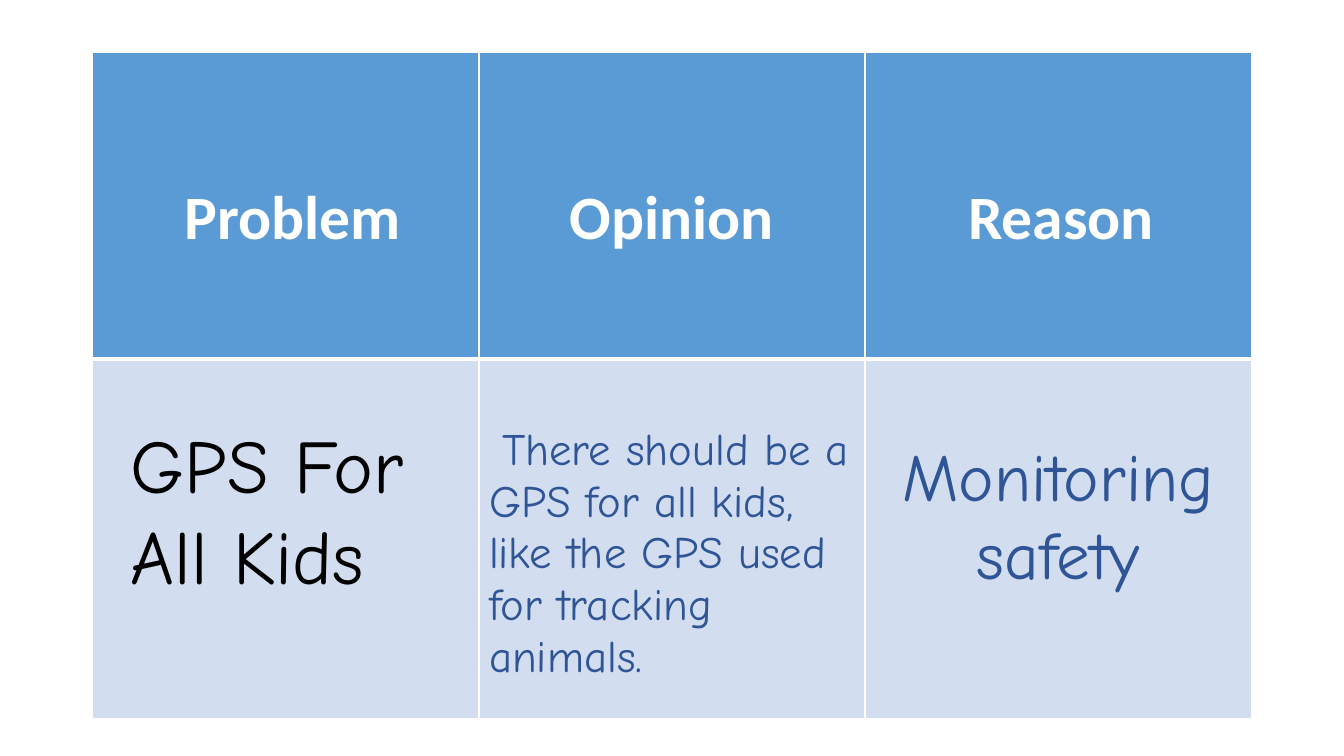
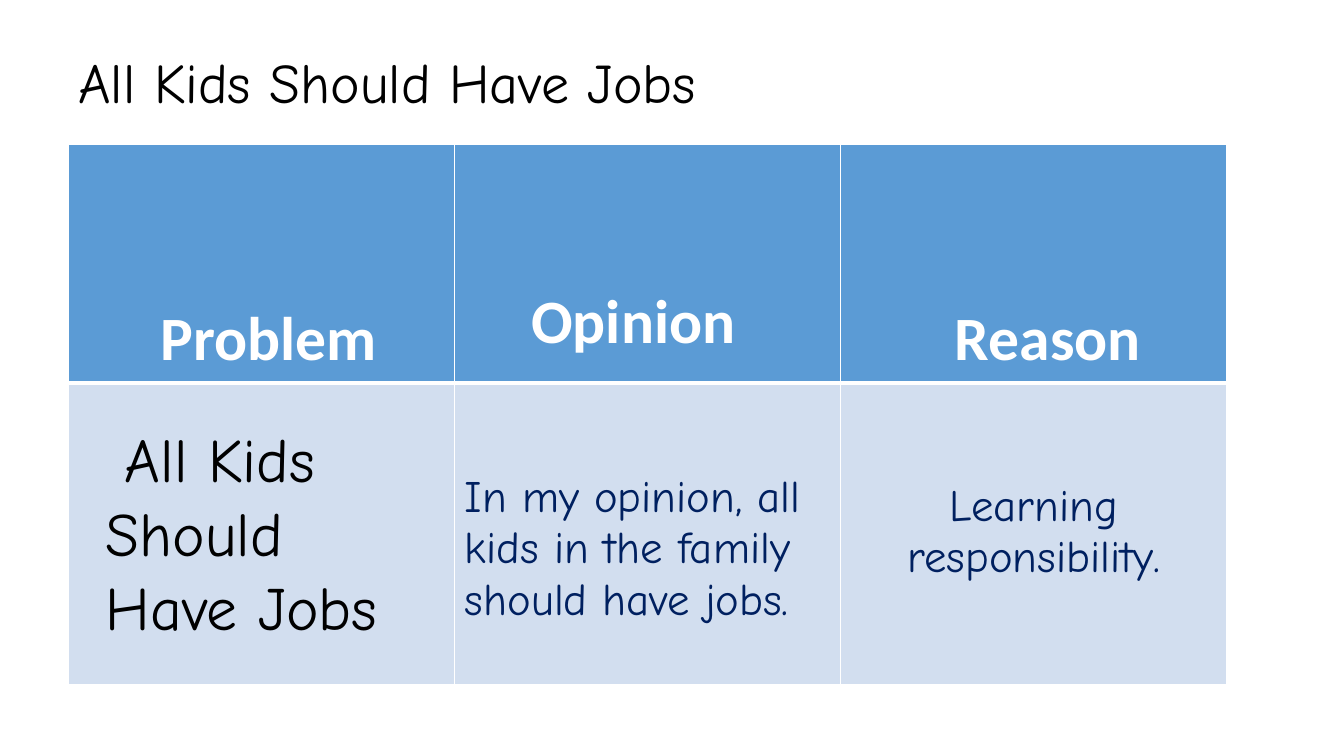
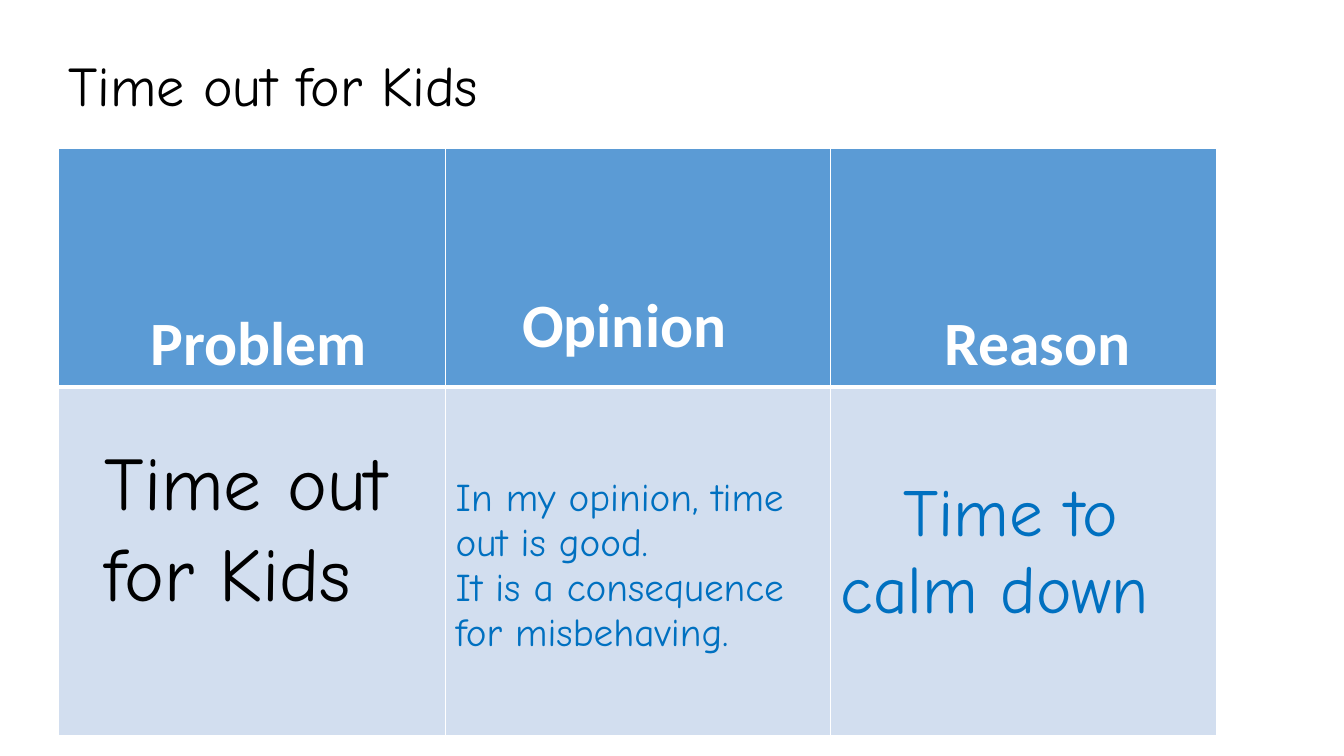
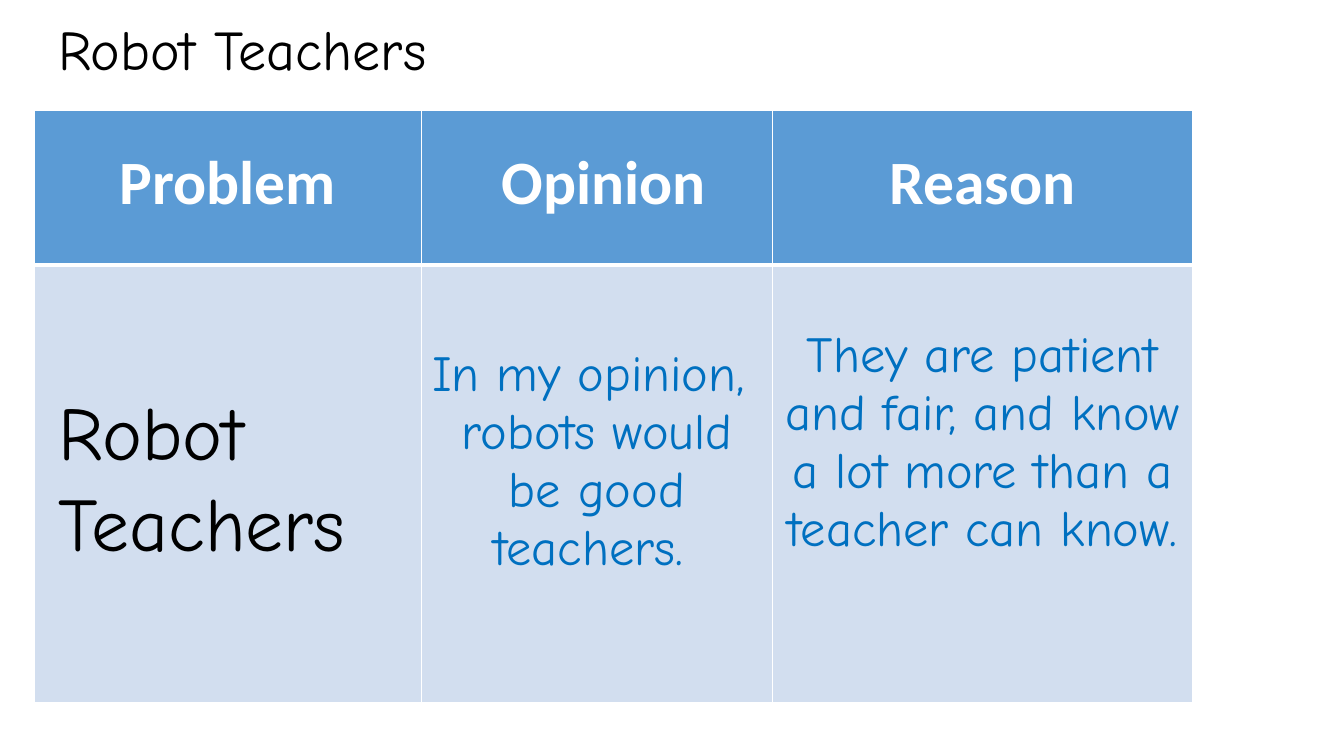
from dataclasses import dataclass

from lxml import etree
from pptx import Presentation
from pptx import util as u
from pptx.dml.color import RGBColor
from pptx.enum import text
from pptx.oxml import ns


@dataclass(frozen=True)
class Theme:
    header_fill: str = "5B9BD5"
    body_fill: str = "D2DEEF"
    white: str = "FFFFFF"
    black: str = "000000"
    blue: str = "2F5597"
    navy: str = "002060"
    bright: str = "0070C0"
    header_font: str = "Calibri"
    body_font: str = "Comic Neue"
    title_size: int = 40
    header_size: int = 44
    small_size: int = 28
    body_size: int = 32
    medium_size: int = 36
    large_size: int = 48
    topic_size: int = 54
    thin: float = 1
    thick: float = 3
    padding: float = 0.1


@dataclass
class CellText:
    lines: tuple
    top: float
    left: float = 0
    size: int = 0
    color: str = ""
    centered: bool = True
    indent: float = 0


class Deck:
    def __init__(self, theme):
        self.theme = theme
        self.presentation = Presentation()
        self.presentation.slide_width = u.Inches(13.33)
        self.presentation.slide_height = u.Inches(7.5)
        self.slide = None

    def add_slide(self):
        layout = self.presentation.slide_layouts[6]
        self.slide = self.presentation.slides.add_slide(layout)

    def fill_text(self, frame, lines, font, size, color, bold=False, centered=False, indent=0):
        for index, line in enumerate(lines):
            paragraph = frame.add_paragraph() if index else frame.paragraphs[0]
            paragraph.text = line
            paragraph.alignment = text.PP_ALIGN.CENTER if centered else text.PP_ALIGN.LEFT
            paragraph.font.name = font
            paragraph.font.size = u.Pt(size)
            paragraph.font.bold = bold
            paragraph.font.color.rgb = RGBColor.from_string(color)
            if indent and not index:
                paragraph._p.get_or_add_pPr().set("indent", str(u.Inches(indent)))

    def text_box(self, words, left, top, width, height, size, indent=0):
        shape = self.slide.shapes.add_textbox(*map(u.Inches, (left, top, width, height)))
        frame = shape.text_frame
        frame.word_wrap = True
        self.fill_text(frame, (words,), self.theme.body_font, size, self.theme.black, indent=indent)

    def title(self, words, left, top, width):
        self.text_box(words, left, top, width, 0.77, self.theme.title_size)

    def borders(self, cell, bottom):
        properties = cell._tc.get_or_add_tcPr()
        for side in ("lnL", "lnR", "lnT", "lnB"):
            width = bottom if side == "lnB" else self.theme.thin
            line = etree.SubElement(properties, ns.qn(f"a:{side}"), w=str(u.Pt(width)))
            fill = etree.SubElement(line, ns.qn("a:solidFill"))
            etree.SubElement(fill, ns.qn("a:srgbClr"), val=self.theme.white)

    def cell(self, cell, content, header):
        theme = self.theme
        self.borders(cell, theme.thick if header else theme.thin)
        cell.fill.solid()
        cell.fill.fore_color.rgb = RGBColor.from_string(
            theme.header_fill if header else theme.body_fill)
        if content is None:
            return
        cell.margin_top = u.Inches(content.top)
        cell.margin_left = u.Inches(theme.padding + content.left)
        self.fill_text(
            cell.text_frame, content.lines,
            theme.header_font if header else theme.body_font,
            content.size or theme.header_size, content.color or theme.white,
            header, content.centered, content.indent)

    def table(self, left, top, columns, heights, headers, bodies):
        frame = self.slide.shapes.add_table(
            2, 3, *map(u.Inches, (left, top, sum(columns), sum(heights))))
        table = frame.table
        for column, width in zip(table.columns, columns):
            column.width = u.Inches(width)
        for index, contents in enumerate((headers, (None, *bodies))):
            table.rows[index].height = u.Inches(heights[index])
            for column, content in enumerate(contents):
                self.cell(table.cell(index, column), content, index == 0)


def headings(tops, lefts, opinion_centered=True):
    return [
        CellText((name,), top, left, centered=name != "Opinion" or opinion_centered)
        for name, top, left in zip(("Problem", "Opinion", "Reason"), tops, lefts)
    ]


def main():
    theme = Theme()
    deck = Deck(theme)
    equal_columns = (3.83, 3.83, 3.83)
    low_headings = headings((1.57, 1.4, 1.57), (0.14, 0.66, 0.28), False)

    deck.add_slide()
    deck.table(
        0.92, 0.52, equal_columns, (3.04, 3.57),
        headings((1.27, 1.27, 1.27), (0.14, 0, 0.06)),
        (CellText(("There should be a GPS for all kids, like the GPS used for tracking animals.",),
                  0.66, size=theme.body_size, color=theme.blue, centered=False, indent=0.13),
         CellText(("Monitoring", "safety"), 0.82, size=theme.large_size, color=theme.blue)))
    deck.text_box("GPS For All Kids", 1.2, 4.1, 3.38, 1.92, theme.topic_size)

    deck.add_slide()
    deck.table(
        0.68, 1.43, equal_columns, (2.37, 2.99), low_headings,
        (CellText(("In my opinion, all kids in the family should have jobs.",),
                  0.88, size=theme.body_size, color=theme.navy, centered=False),
         CellText(("Learning responsibility.",), 0.97, size=theme.body_size, color=theme.navy)))
    deck.text_box("All Kids Should Have Jobs", 0.95, 4.13, 3.25, 2.32, theme.header_size, 0.19)
    deck.title("All Kids Should Have Jobs", 0.68, 0.42, 7.81)

    deck.add_slide()
    deck.table(
        0.58, 1.47, (3.84, 3.82, 3.83), (2.37, 3.46), low_headings,
        (CellText(("In my opinion, time out is good.", "It is a consequence for misbehaving."),
                  0.88, size=theme.small_size, color=theme.bright, centered=False),
         CellText(("Time to calm down",), 0.88, size=theme.large_size,
                  color=theme.bright, centered=False, indent=0.62)))
    deck.text_box("Time out for Kids", 0.94, 4.27, 3.02, 2.83, theme.topic_size)
    deck.title("Time out for Kids", 0.58, 0.45, 8.3)

    deck.add_slide()
    deck.table(
        0.34, 1.1, (3.84, 3.48, 4.17), (1.53, 4.34),
        headings((0.35, 0.35, 0.35), (0, 0.14, 0)),
        (CellText(("In my opinion, ", "robots would be good teachers. "),
                  0.8, size=theme.medium_size, color=theme.bright),
         CellText(("They are patient and fair, and know a lot more than a teacher can know.",),
                  0.62, size=theme.medium_size, color=theme.bright)))
    deck.text_box("Robot Teachers", 0.48, 3.77, 3.61, 1.92, theme.topic_size)
    deck.title("Robot Teachers", 0.48, 0.1, 6.46)

    deck.presentation.save("out.pptx")


if __name__ == "__main__":
    main()
